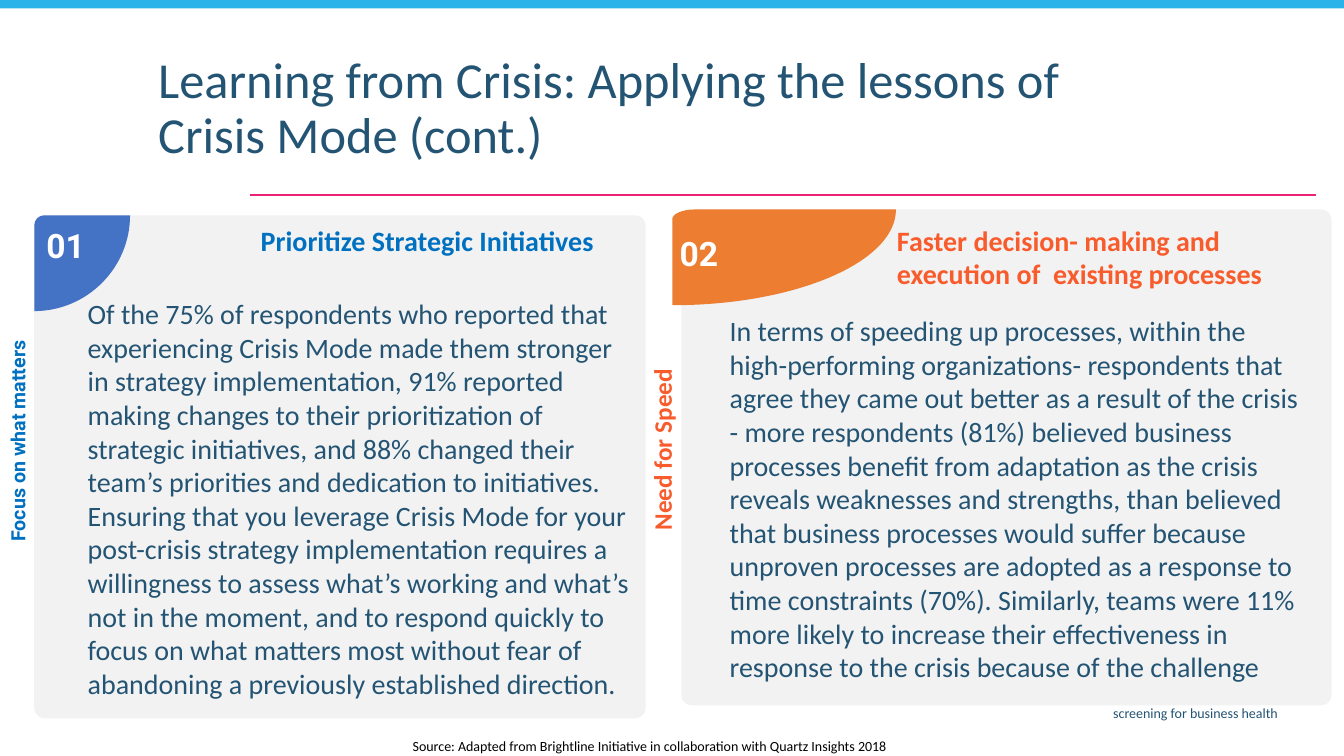
from dataclasses import dataclass

from lxml.etree import Element, SubElement
from pptx import Presentation
from pptx.dml.color import RGBColor
from pptx.enum.shapes import MSO_CONNECTOR as Connector
from pptx.enum.shapes import MSO_SHAPE as Preset
from pptx.enum.text import MSO_ANCHOR as Anchor
from pptx.enum.text import PP_ALIGN as Align
from pptx.oxml.ns import qn
from pptx.util import Pt

COLORS = {
    "navy": "245473", "sky": "29B3E8", "pink": "EC2179", "card": "F2F2F2",
    "blue": "0070C0", "blue_badge": "4472C4", "coral": "F95C2C",
    "orange_badge": "ED7D31", "white": "FFFFFF", "black": "000000",
}


@dataclass
class Panel:
    """Content of one panel, with part boxes measured from its top left corner."""
    number: str
    heading: str
    label: str
    body: str
    accent: str
    badge_color: str
    badge_box: tuple
    badge_corner: float
    number_box: tuple
    heading_box: tuple
    heading_align: Align
    body_box: tuple
    label_center: tuple
    label_size: float
    label_font: str


PRIORITIES = Panel(
    number="01",
    heading="Prioritize Strategic Initiatives",
    label="Focus on what matters",
    body=(
        "Of the 75% of respondents who reported that experiencing Crisis Mode made them "
        "stronger in strategy implementation, 91% reported making changes to their "
        "prioritization of strategic initiatives, and 88% changed their team’s priorities "
        "and dedication to initiatives. Ensuring that you leverage Crisis Mode for your "
        "post-crisis strategy implementation requires a willingness to assess what’s "
        "working and what’s not in the moment, and to respond quickly to focus on what "
        "matters most without fear of abandoning a previously established direction."
    ),
    accent="blue", badge_color="blue_badge",
    badge_box=(0, 0, 68.4, 68.4), badge_corner=7,
    number_box=(1.4, 3, 41.8, 36),
    heading_box=(104.4, 2.2, 302.4, 31), heading_align=Align.RIGHT,
    body_box=(31.7, 54.9, 406, 297.4),
    label_center=(-11.9, 161.3), label_size=14, label_font="Roboto",
)

SPEED = Panel(
    number="02",
    heading="Faster decision- making and \vexecution of  existing processes",
    label="Need for Speed",
    body=(
        "In terms of speeding up processes, within the high-performing organizations- "
        "respondents that agree they came out better as a result of the crisis - more "
        "respondents (81%) believed business processes benefit from adaptation as the "
        "crisis reveals weaknesses and strengths, than believed that business processes "
        "would suffer because unproven processes are adopted as a response to time "
        "constraints (70%). Similarly, teams were 11% more likely to increase their "
        "effectiveness in response to the crisis because of the challenge"
    ),
    accent="coral", badge_color="orange_badge",
    badge_box=(-6.5, 0, 159.8, 68.4), badge_corner=16,
    number_box=(-17.3, 13.3, 59.8, 36),
    heading_box=(146.9, 6.4, 339, 77.8), heading_align=Align.LEFT,
    body_box=(28.1, 71.2, 419.8, 272.9),
    label_center=(-14, 171.6), label_size=18, label_font="Calibri",
)


def color(name):
    """Return the named colour."""
    return RGBColor.from_string(COLORS[name])


def paint(shape, fill):
    """Give a shape a flat fill without line or shadow."""
    shape.shadow.inherit = False
    shape.fill.solid()
    shape.fill.fore_color.rgb = color(fill)
    shape.line.fill.background()


def write(shape, text, size=20, ink="navy", font="Calibri", bold=False,
          align=Align.LEFT, anchor=Anchor.TOP, line_spacing=1.0, inset=(7.2, 3.6)):
    """Write formatted text into a shape."""
    frame = shape.text_frame
    frame.word_wrap = True
    frame.vertical_anchor = anchor
    frame.margin_left = frame.margin_right = Pt(inset[0])
    frame.margin_top = frame.margin_bottom = Pt(inset[1])
    paragraph = frame.paragraphs[0]
    paragraph.text = text
    paragraph.alignment = align
    paragraph.line_spacing = line_spacing
    paragraph.space_before = Pt(0)
    for run in paragraph.runs:
        run.font.name = font
        run.font.size = Pt(size)
        run.font.bold = bold
        run.font.color.rgb = color(ink)


def add_text(slide, box, text, rotation=0, **style):
    """Add a text box with formatted text."""
    shape = slide.shapes.add_textbox(*map(Pt, box))
    shape.rotation = rotation
    write(shape, text, **style)


def bend(segment, controls):
    """Turn a straight outline segment into a curve with two control points."""
    segment.tag = qn("a:cubicBezTo")
    for position, (x, y) in enumerate(controls):
        point = Element(qn("a:pt"), x=str(Pt(x)), y=str(Pt(y)))
        segment.insert(position, point)


def add_badge(slide, box, corner, fill, corner_height=7, bow=0.55):
    """Draw a quarter ellipse with a rounded top left corner."""
    left, top, width, height = box
    builder = slide.shapes.build_freeform(Pt(left + corner), Pt(top))
    corners = [(0, corner_height), (0, height), (width, 0)]
    builder.add_line_segments([(Pt(left + x), Pt(top + y)) for x, y in corners])
    badge = builder.convert_to_shape()
    rounding, _, sweep = list(badge._element.iter(qn("a:lnTo")))[:3]
    bend(rounding, [(corner * (1 - bow), 0), (0, corner_height * (1 - bow))])
    bend(sweep, [(width * bow, height), (width, height * bow)])
    paint(badge, fill)


def add_panel(slide, box, panel):
    """Place a card with its badge, side label, heading and body."""
    left, top, width, height = box

    def inside(part):
        """Shift a part box to the panel position."""
        return (left + part[0], top + part[1], *part[2:])

    card = slide.shapes.add_shape(Preset.ROUNDED_RECTANGLE, *map(Pt, box))
    card.adjustments[0] = 7.5 / height
    paint(card, "card")
    add_badge(slide, inside(panel.badge_box), panel.badge_corner, panel.badge_color)
    label_width, label_height = 326, panel.label_size + 10.6
    center_x, center_y = panel.label_center
    label_box = (center_x - label_width / 2, center_y - label_height / 2,
                 label_width, label_height)
    add_text(slide, inside(label_box), panel.label, rotation=270, size=panel.label_size,
             ink=panel.accent, font=panel.label_font, bold=True,
             align=Align.CENTER, anchor=Anchor.MIDDLE)
    add_text(slide, inside(panel.heading_box), panel.heading, ink=panel.accent,
             bold=True, align=panel.heading_align)
    add_text(slide, inside(panel.body_box), panel.body, inset=(6.4, 3.2))
    add_text(slide, inside(panel.number_box), panel.number, size=24, ink="white",
             font="Roboto", bold=True, align=Align.CENTER, anchor=Anchor.MIDDLE)


def add_header(slide, box):
    """Place the top bar, the title and the rule below it."""
    left, top, width, height = box
    bar = slide.shapes.add_shape(Preset.RECTANGLE, Pt(left), Pt(top), Pt(width), Pt(6))
    paint(bar, "sky")
    title = slide.shapes.title
    title.left, title.top = Pt(left + 105.8), Pt(top + 36)
    title.width, title.height = Pt(697), Pt(54.7)
    write(title, "Learning from Crisis: Applying the lessons of Crisis Mode (cont.)",
          size=36, line_spacing=0.9)
    rule_y = Pt(top + height)
    rule = slide.shapes.add_connector(Connector.STRAIGHT, Pt(left + width - 19.7), rule_y,
                                      Pt(left + 178.6), rule_y)
    rule.line.color.rgb = color("pink")
    rule.line.width = Pt(1.5)
    SubElement(rule._element.spPr, qn("a:effectLst"))


def add_footer(slide, box):
    """Place the tagline and the source line."""
    left, top, width, height = box
    add_text(slide, (left + 262.4, top, 657.4, 20.9), "screening for business health",
             size=10, align=Align.RIGHT)
    add_text(slide, (left + 287.7, top + height - 19.4, 436.3, 19.4),
             "Source: Adapted from Brightline Initiative in collaboration with "
             "Quartz Insights 2018", size=10, ink="black", anchor=Anchor.BOTTOM)


def main():
    """Build and save the slide."""
    presentation = Presentation()
    presentation.slide_width, presentation.slide_height = Pt(960), Pt(540)
    slide = presentation.slides.add_slide(presentation.slide_layouts[5])
    add_header(slide, (0, 0, 960, 139))
    add_footer(slide, (0, 499.7, 960, 43))
    add_panel(slide, (24.5, 153.8, 436.7, 359.3), PRIORITIES)
    add_panel(slide, (486.7, 149.6, 464.4, 354.2), SPEED)
    presentation.save("out.pptx")


if __name__ == "__main__":
    main()
